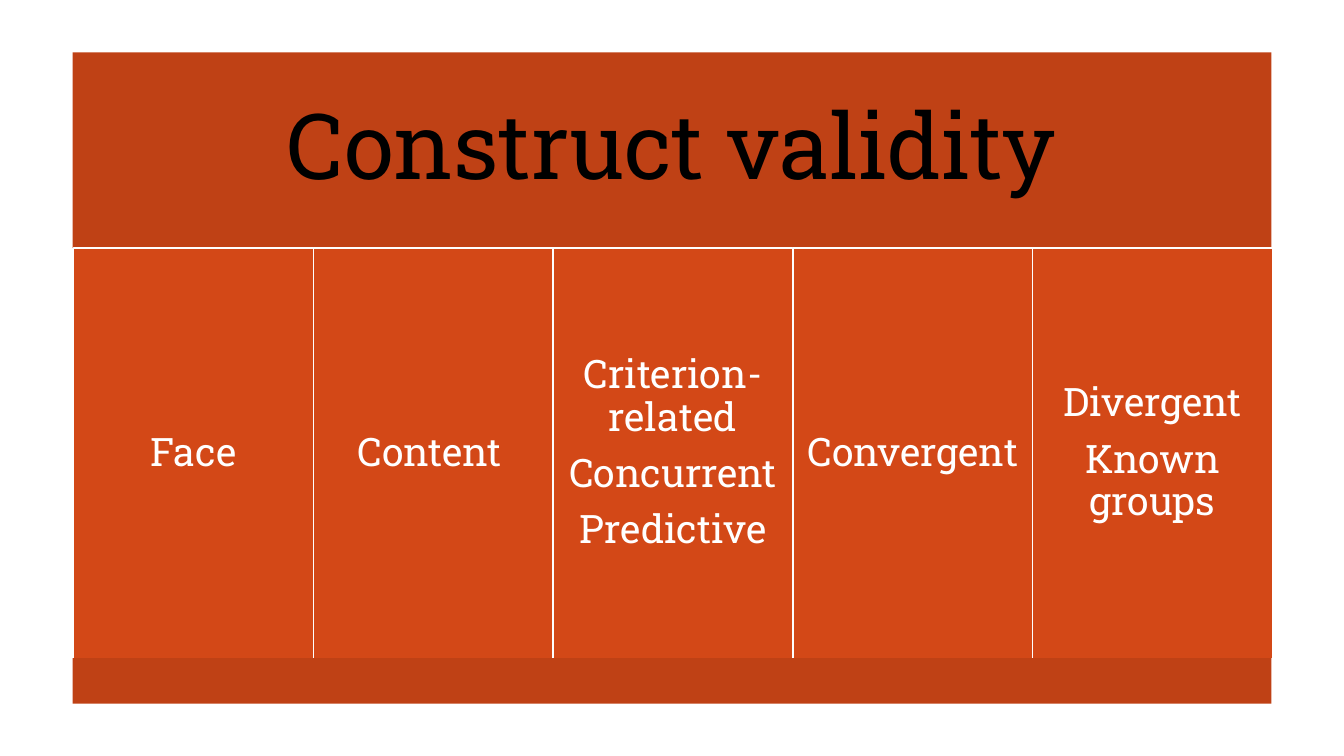
from pptx import Presentation
from pptx.dml.color import RGBColor
from pptx.enum.shapes import MSO_SHAPE
from pptx.enum.text import MSO_ANCHOR, MSO_AUTO_SIZE, PP_ALIGN
from pptx.util import Inches, Pt

RUST = RGBColor(0xBF, 0x41, 0x15)
ORANGE = RGBColor(0xD3, 0x48, 0x17)
WHITE = RGBColor(0xFF, 0xFF, 0xFF)
BLACK = RGBColor(0x00, 0x00, 0x00)

LEFT, WIDTH = 0.72, 11.89
COLUMN_TOP, COLUMN_HEIGHT = 2.46, 4.08
VALIDITY_TYPES = [
    ["Face"],
    ["Content\t"],
    ["Criterion-related", "Concurrent", "Predictive"],
    ["Convergent"],
    ["Divergent", "Known groups"],
]


def apply_format(target, values):
    for name, value in values.items():
        setattr(target, name, value)


class ValiditySlide:
    font_name = "Roboto Slab"
    paragraph_format = {"alignment": PP_ALIGN.CENTER, "line_spacing": 0.9}

    def __init__(self, presentation):
        self.slide = presentation.slides.add_slide(presentation.slide_layouts[5])

    def set_text(self, shape, lines, size, color, inset):
        frame = shape.text_frame
        frame.text = "\n".join(lines)
        margin = Inches(inset)
        apply_format(frame, {
            "word_wrap": True,
            "auto_size": MSO_AUTO_SIZE.NONE,
            "vertical_anchor": MSO_ANCHOR.MIDDLE,
            "margin_left": margin,
            "margin_right": margin,
            "margin_top": margin,
            "margin_bottom": margin,
        })
        for paragraph in frame.paragraphs:
            apply_format(paragraph, self.paragraph_format)
            paragraph.space_after = Pt(round(size * 0.35))
            apply_format(paragraph.font, {"name": self.font_name, "size": Pt(size)})
            paragraph.font.color.rgb = color

    def heading(self, text, left, top, width, height):
        title = self.slide.shapes.title
        apply_format(title, {
            "left": Inches(left),
            "top": Inches(top),
            "width": Inches(width),
            "height": Inches(height),
        })
        title.fill.solid()
        title.fill.fore_color.rgb = RUST
        self.set_text(title, [text], 65, BLACK, 0.27)

    def panel(self, left, top, width, height, fill, outline=None):
        panel = self.slide.shapes.add_shape(
            MSO_SHAPE.RECTANGLE, Inches(left), Inches(top), Inches(width), Inches(height))
        panel.shadow.inherit = False
        panel.fill.solid()
        panel.fill.fore_color.rgb = fill
        if outline is None:
            panel.line.fill.background()
        else:
            panel.line.color.rgb = outline
            panel.line.width = Pt(1)
        return panel

    def column(self, lines, left, top, width, height):
        column = self.panel(left, top, width, height, ORANGE, WHITE)
        self.set_text(column, lines, 28, WHITE, 0.12)


def main():
    presentation = Presentation()
    presentation.slide_width = Inches(13.33)
    presentation.slide_height = Inches(7.5)

    validity = ValiditySlide(presentation)
    validity.heading("Construct validity", LEFT, 0.52, WIDTH, 1.94)
    column_width = WIDTH / len(VALIDITY_TYPES)
    for index, lines in enumerate(VALIDITY_TYPES):
        validity.column(lines, LEFT + 0.01 + index * column_width, COLUMN_TOP,
                        column_width, COLUMN_HEIGHT)
    validity.panel(LEFT, 6.53, WIDTH, 0.45, RUST)

    presentation.save("out.pptx")


if __name__ == "__main__":
    main()
